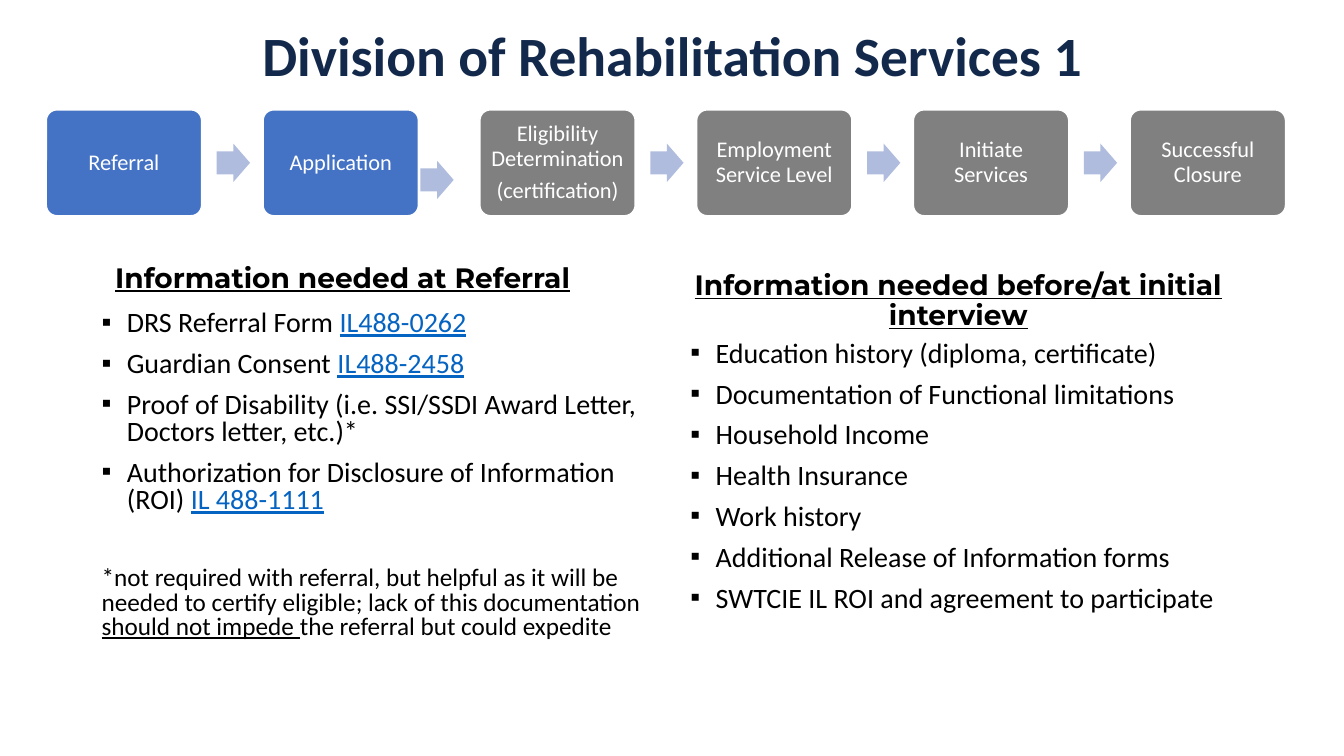
"""Build the rehabilitation services slide: a six-step process above two lists."""
from dataclasses import dataclass

from lxml import etree
from pptx import Presentation, util as u
from pptx.dml.color import RGBColor
from pptx.enum import shapes, text
from pptx.oxml.ns import qn

TITLE = "Division of Rehabilitation Services 1"
STEPS = [
    ["Referral"],
    ["Application"],
    ["Eligibility Determination", "(certification)"],
    ["Employment Service Level"],
    ["Initiate Services"],
    ["Successful Closure"],
]
STEPS_REACHED = 2
LOWERED_ARROW = 1

REFERRAL_HEADING = "Information needed at Referral"
REFERRAL_ITEMS = [
    ["DRS Referral Form ", ("IL488-0262", "link")],
    ["Guardian Consent ", ("IL488-2458", "link")],
    ["Proof of Disability (i.e. SSI/SSDI Award Letter, Doctors letter, etc.)*"],
    ["Authorization for Disclosure of Information (ROI) ", ("IL 488-1111", "link")],
]
REFERRAL_NOTE = [
    "*not required with referral, but helpful as it will be needed to certify "
    "eligible; lack of this documentation ",
    ("should not impede ", "underline"),
    "the referral but could expedite",
]
INTERVIEW_HEADING = "Information needed before/at initial interview"
INTERVIEW_ITEMS = [
    "Education history (diploma, certificate)",
    "Documentation of Functional limitations",
    "Household Income",
    "Health Insurance",
    "Work history",
    "Additional Release of Information forms",
    "SWTCIE IL ROI and agreement to participate",
]


@dataclass(frozen=True)
class Theme:
    navy: str = "13294B"
    black: str = "000000"
    white: str = "FFFFFF"
    link: str = "0563C1"
    reached: str = "4472C4"
    pending: str = "808080"
    arrow: str = "B0BCDE"
    body_font: str = "Calibri"
    heading_font: str = "Montserrat"
    bullet_font: str = "Arial"
    title_size: float = 39.6
    body_size: float = 20
    note_size: float = 18
    step_size: float = 16


THEME = Theme()
SLIDE_SIZE = (13.33, 7.5)
STEP_LEFT, STEP_TOP, STEP_PITCH = 0.46, 1.09, 2.15
STEP_WIDTH, STEP_HEIGHT = 1.54, 1.05
STEP_INSET = 0.05
ARROW_WIDTH, ARROW_HEIGHT = 0.33, 0.38
ARROW_OFFSET, ARROW_SHIFT = 1.69, (-0.13, 0.17)
ITEM_GAP, NOTE_GAP = 10, 37.6


def write(box, paragraphs, *, size, color=THEME.black, font=THEME.body_font,
          align=text.PP_ALIGN.LEFT, anchor=text.MSO_ANCHOR.TOP, spacing=0.9,
          gap=0, bullet=None, bold=False, underline=False, extend=False):
    """Write paragraphs, each a string or a list of plain and styled spans."""
    frame = box.text_frame
    frame.word_wrap = True
    frame.vertical_anchor = anchor
    for index, content in enumerate(paragraphs):
        first = index == 0 and not extend
        para = frame.paragraphs[0] if first else frame.add_paragraph()
        if bullet:
            props = para._p.get_or_add_pPr()
            props.set("marL", str(u.Inches(0.25)))
            props.set("indent", str(-u.Inches(0.25)))
            etree.SubElement(props, qn("a:buFont")).set("typeface", THEME.bullet_font)
            etree.SubElement(props, qn("a:buChar")).set("char", bullet)
        para.alignment = align
        para.line_spacing = spacing
        if not first:
            para.space_before = u.Pt(gap)
        for piece in [content] if isinstance(content, str) else content:
            words, style = (piece, "") if isinstance(piece, str) else piece
            span = para.add_run()
            span.text = words
            span.font.size = u.Pt(size)
            span.font.name = font
            span.font.bold = bold
            span.font.underline = underline or bool(style)
            span.font.color.rgb = RGBColor.from_string(
                THEME.link if style == "link" else color)


def add_box(page, *place):
    return page.shapes.add_textbox(*map(u.Inches, place))


def add_block(page, kind, place, fill, adjustments):
    block = page.shapes.add_shape(kind, *map(u.Inches, place))
    block.shadow.inherit = False
    block.fill.solid()
    block.fill.fore_color.rgb = RGBColor.from_string(fill)
    block.line.fill.background()
    for index, value in enumerate(adjustments):
        block.adjustments[index] = value
    return block


def add_process(page):
    for index, lines in enumerate(STEPS):
        left = STEP_LEFT + index * STEP_PITCH
        step = add_block(page, shapes.MSO_SHAPE.ROUNDED_RECTANGLE,
                         (left, STEP_TOP, STEP_WIDTH, STEP_HEIGHT),
                         THEME.reached if index < STEPS_REACHED else THEME.pending,
                         [0.1])
        step.line.color.rgb = RGBColor.from_string(THEME.white)
        step.line.width = u.Pt(1)
        frame = step.text_frame
        frame.margin_left = frame.margin_right = u.Inches(STEP_INSET)
        frame.margin_top = frame.margin_bottom = u.Inches(STEP_INSET)
        write(step, lines, size=THEME.step_size, color=THEME.white, gap=5.6,
              align=text.PP_ALIGN.CENTER, anchor=text.MSO_ANCHOR.MIDDLE)
        if index < len(STEPS) - 1:
            across, down = ARROW_SHIFT if index == LOWERED_ARROW else (0, 0)
            top = STEP_TOP + (STEP_HEIGHT - ARROW_HEIGHT) / 2
            add_block(page, shapes.MSO_SHAPE.RIGHT_ARROW,
                      (left + ARROW_OFFSET + across, top + down,
                       ARROW_WIDTH, ARROW_HEIGHT), THEME.arrow, [0.6, 0.5])


def add_list(page, heading, heading_place, items, items_place):
    write(add_box(page, *heading_place), [heading], size=THEME.body_size,
          font=THEME.heading_font, align=text.PP_ALIGN.CENTER,
          anchor=text.MSO_ANCHOR.BOTTOM, bold=True, underline=True)
    box = add_box(page, *items_place)
    write(box, items, size=THEME.body_size, spacing=0.8, gap=ITEM_GAP, bullet="▪")
    return box


def main():
    deck = Presentation()
    deck.slide_width, deck.slide_height = map(u.Inches, SLIDE_SIZE)
    page = deck.slides.add_slide(deck.slide_layouts[6])
    write(add_box(page, 0.92, 0.29, 11.5, 0.58), [TITLE], size=THEME.title_size,
          color=THEME.navy, align=text.PP_ALIGN.CENTER,
          anchor=text.MSO_ANCHOR.MIDDLE, bold=True)
    referral = add_list(page, REFERRAL_HEADING, (0.58, 2.07, 5.64, 0.9),
                        REFERRAL_ITEMS, (0.91, 3.04, 5.64, 3.43))
    write(referral, [REFERRAL_NOTE], size=THEME.note_size, spacing=0.8,
          gap=NOTE_GAP, extend=True)
    add_list(page, INTERVIEW_HEADING, (6.67, 2.44, 5.67, 0.9),
             INTERVIEW_ITEMS, (6.75, 3.34, 5.67, 3.13))
    add_process(page)
    deck.save("out.pptx")


if __name__ == "__main__":
    main()
